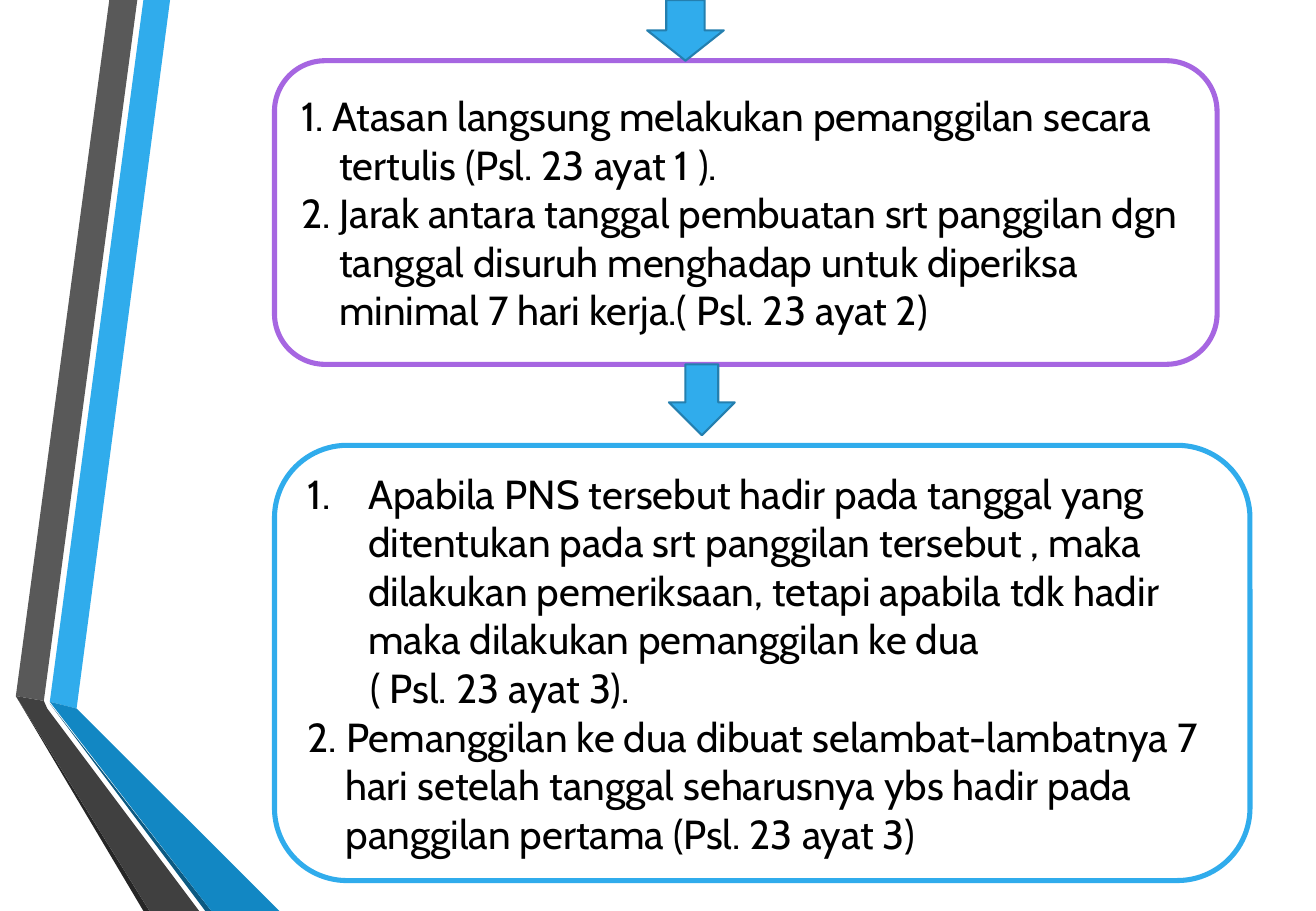
from pptx import Presentation
from pptx.dml.color import RGBColor as RGB
from pptx.enum.shapes import MSO_SHAPE as Kind
from pptx.enum.text import MSO_ANCHOR as Anchor, PP_ALIGN as Align
from pptx.oxml.ns import qn
from pptx.util import Pt
from lxml.etree import SubElement as Sub

FONT = "Cabin"
BLACK = RGB(0x00, 0x00, 0x00)
WHITE = RGB(0xFF, 0xFF, 0xFF)
BLUE = RGB(0x30, 0xAC, 0xEC)
EDGE = RGB(0x24, 0x7F, 0xAF)
DEEP = RGB(0x12, 0x87, 0xC3)
NAVY = RGB(0x0C, 0x5A, 0x82)
PURPLE = RGB(0xA6, 0x66, 0xE1)
GREY = RGB(0x59, 0x59, 0x59)
DARK = RGB(0x40, 0x40, 0x40)
SHADE = RGB(0x26, 0x26, 0x26)

BANDS = [
    (BLUE, [(29.5, 416), (45.4, 420), (100.8, 0), (85, 0)]),
    (GREY, [(81.4, 0), (64.8, 0), (9.4, 412.6), (26, 415.5)]),
    (SHADE, [(9.4, 412.6), (85, 540), (88.6, 540)]),
    (NAVY, [(29.5, 417), (121.7, 540), (125.3, 540)]),
    (DEEP, [(29.5, 416), (125.3, 540), (165.6, 540), (45.4, 420)]),
    (DARK, [(118, 540), (28, 420), (26, 415.5), (9.4, 412.6), (88.6, 540)]),
]

CALL = [
    ("1. Atasan langsung melakukan pemanggilan secara tertulis "
     "(Psl. 23 ayat 1 ).", 22.5, -22.5, False),
    ("2. Jarak antara tanggal pembuatan srt panggilan dgn tanggal disuruh "
     "menghadap untuk diperiksa minimal 7 hari kerja.( Psl. 23 ayat 2)",
     22.5, -22.5, False),
]
SECOND = [
    ("Apabila PNS tersebut hadir pada tanggal yang ditentukan pada srt "
     "panggilan tersebut , maka dilakukan pemeriksaan, tetapi apabila tdk "
     "hadir maka dilakukan pemanggilan ke dua", 36, -36, True),
    ("( Psl. 23 ayat 3).", 37, 0, False),
    ("2. Pemanggilan ke dua dibuat selambat-lambatnya 7 hari setelah tanggal "
     "seharusnya ybs hadir pada panggilan pertama (Psl. 23 ayat 3)",
     22.5, -22.5, False),
]


def add_band(slide, color, points):
    start, *rest = [(Pt(x), Pt(y)) for x, y in points]
    pen = slide.shapes.build_freeform(*start, scale=1.0)
    pen.add_line_segments(rest, close=True)
    band = pen.convert_to_shape()
    band.shadow.inherit = False
    band.fill.solid()
    band.fill.fore_color.rgb = color
    band.line.fill.background()


def add_form(slide, kind, place, fill, line, width):
    form = slide.shapes.add_shape(kind, *map(Pt, place))
    form.shadow.inherit = False
    form.fill.solid()
    form.fill.fore_color.rgb = fill
    form.line.color.rgb = line
    form.line.width = Pt(width)
    return form


def add_arrow(slide, *place):
    add_form(slide, Kind.DOWN_ARROW, place, BLUE, EDGE, 1.25)


def add_item(para, text, left, hang, number):
    props = para._p.get_or_add_pPr()
    props.set("marL", str(Pt(left)))
    props.set("indent", str(Pt(hang)))
    if number:
        Sub(props, qn("a:buFont"), typeface=FONT)
        Sub(props, qn("a:buAutoNum"), type="arabicPeriod")
    para.alignment = Align.LEFT
    run = para.add_run()
    run.text = text
    run.font.name = FONT
    run.font.size = Pt(24)
    run.font.color.rgb = BLACK


def add_box(slide, place, line, items):
    box = add_form(slide, Kind.ROUNDED_RECTANGLE, place, WHITE, line, 3)
    frame = box.text_frame
    frame.word_wrap = True
    frame.vertical_anchor = Anchor.MIDDLE
    for i, item in enumerate(items):
        para = frame.add_paragraph() if i else frame.paragraphs[0]
        add_item(para, *item)


def main():
    deck = Presentation()
    deck.slide_width, deck.slide_height = Pt(780), Pt(540)
    slide = deck.slides.add_slide(deck.slide_layouts[6])
    for color, points in BANDS:
        add_band(slide, color, points)
    add_box(slide, (162.7, 36, 558.7, 180), PURPLE, CALL)
    add_arrow(slide, 383.6, 0, 45.4, 36)
    add_box(slide, (162.7, 264, 578.2, 258), BLUE, SECOND)
    add_arrow(slide, 396.5, 216, 39, 42)
    deck.save("out.pptx")


if __name__ == "__main__":
    main()
